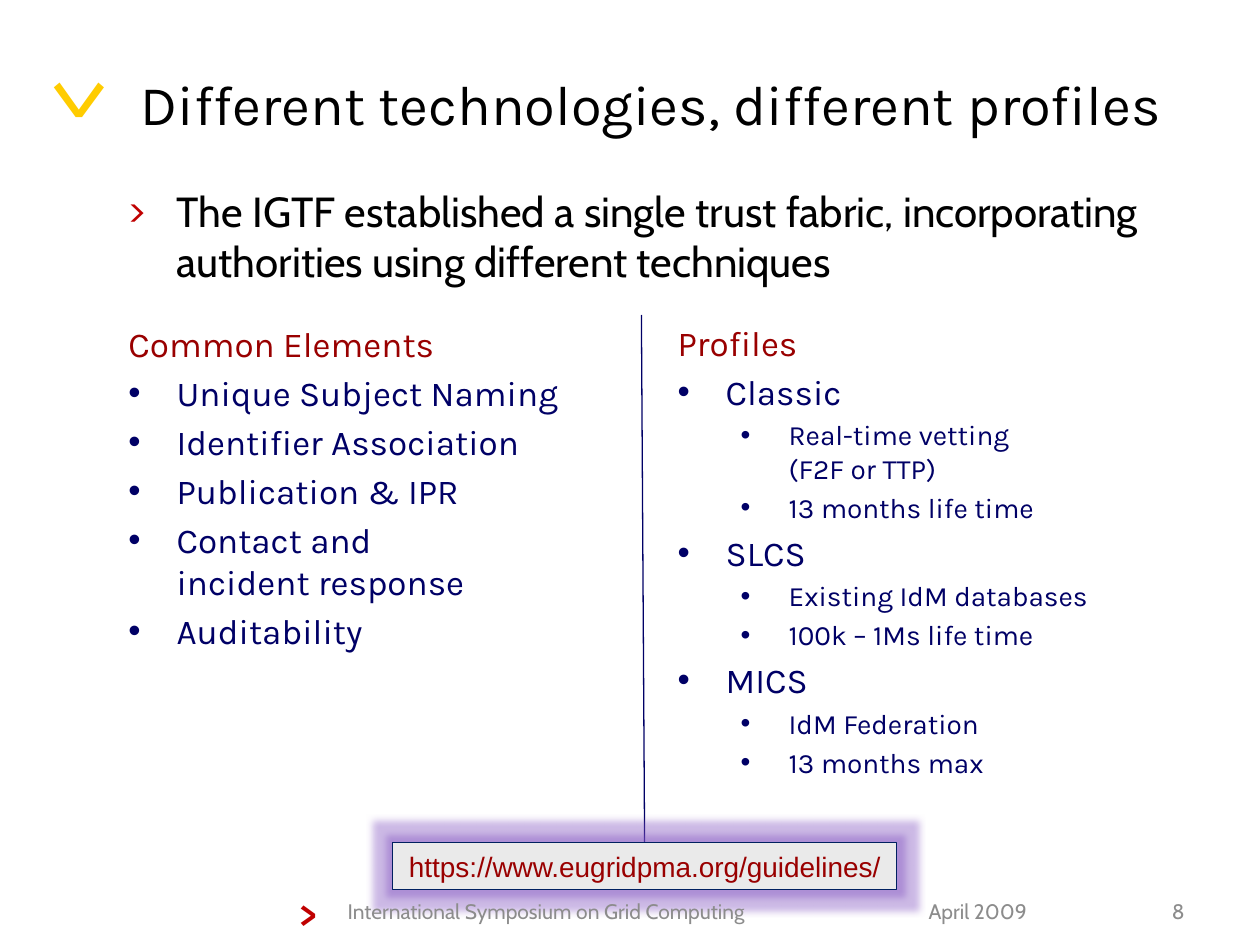
from copy import deepcopy

from lxml import etree
from pptx import Presentation
from pptx import util as u
from pptx.dml.color import RGBColor
from pptx.enum import shapes, text
from pptx.oxml import ns

Cm = u.Cm
INK = {
    "black": "000000", "navy": "000066", "edge": "002060", "red": "C00000",
    "wine": "990000", "gold": "FFCC00", "grey": "8C8C8C", "pale": "EAEAEA",
    "glow": "8050C0",
}
LEFT = [
    "Unique Subject Naming", "Identifier Association", "Publication & IPR",
    "Contact and\nincident response", "Auditability",
]
RIGHT = {
    "Classic": ["Real-time vetting\n(F2F or TTP)", "13 months life time"],
    "SLCS": ["Existing IdM databases", "100k – 1Ms life time"],
    "MICS": ["IdM Federation", "13 months max"],
}


def color(name):
    return RGBColor.from_string(INK[name])


def node(parent, tag, **attrs):
    item = etree.SubElement(parent, ns.qn("a:" + tag))
    for key, value in attrs.items():
        item.set(key, str(value))
    return item


def write(frame, words, size=20, font="Karla", ink="black", bold=False,
          align=None, level=0, hang=False, bullet=None, mark=None):
    """Add one paragraph; the first one fills the empty paragraph."""
    first = not frame.text
    para = frame.paragraphs[0] if first else frame.add_paragraph()
    para.text = words
    para.level = level
    para.alignment = align
    if not first:
        para.space_before = u.Pt(size * 0.2)
    props = para._p.get_or_add_pPr()
    if hang:
        props.set("marL", str(Cm(0.97 + 1.27 * level)))
        props.set("indent", str(-Cm(0.97)))
    if bullet:
        if mark:
            node(node(props, "buClr"), "srgbClr", val=INK[mark])
        node(props, "buFont", typeface="Arial" if bullet == "•" else font)
        node(props, "buChar", char=bullet)
    for run in para.runs:
        run.font.size = u.Pt(size)
        run.font.name = font
        run.font.bold = bold
        run.font.color.rgb = color(ink)
    # Line breaks take the size of the text around them
    for gap in para._p.findall(ns.qn("a:br")):
        gap.append(deepcopy(para.runs[0]._r.rPr))


def box(slide, left, top, width, height, middle=False, turn=0):
    shape = slide.shapes.add_textbox(Cm(left), Cm(top), Cm(width), Cm(height))
    shape.rotation = turn
    frame = shape.text_frame
    frame.word_wrap = True
    if middle:
        frame.vertical_anchor = text.MSO_ANCHOR.MIDDLE
    return frame


def item(frame, words, level=0):
    write(frame, words, size=16 if level else 20, ink="navy",
          level=level, hang=True, bullet="•")


def divide(slide):
    line = slide.shapes.add_connector(
        shapes.MSO_CONNECTOR.STRAIGHT, Cm(12.93), Cm(6.35), Cm(13), Cm(17.93))
    line.line.color.rgb = color("navy")
    line.line.width = u.Pt(0.75)
    node(line._element.spPr, "effectLst")
    return line


def label(slide, words):
    shape = slide.shapes.add_shape(
        shapes.MSO_SHAPE.RECTANGLE, Cm(7.92), Cm(16.98), Cm(10.16), Cm(0.95))
    shape.shadow.inherit = False
    shape.fill.solid()
    shape.fill.fore_color.rgb = color("pale")
    shape.line.color.rgb = color("edge")
    shape.line.width = u.Pt(0.75)
    # Soft glow
    effects = shape._element.spPr.find(ns.qn("a:effectLst"))
    glow = node(effects, "glow", rad=u.Pt(8))
    node(node(glow, "srgbClr", val=INK["glow"]), "alpha", val=40000)
    frame = shape.text_frame
    frame.vertical_anchor = text.MSO_ANCHOR.MIDDLE
    write(frame, words, size=16, font="Arial", ink="wine",
          align=text.PP_ALIGN.CENTER)
    return shape


def main():
    deck = Presentation()
    deck.slide_width, deck.slide_height = Cm(25.4), Cm(19.05)
    slide = deck.slides.add_slide(deck.slide_layouts[6])

    # Chevrons
    write(box(slide, 5.77, 17.86, 1.19, 1.12), ">", ink="red", bold=True)
    write(box(slide, 1.17, 0.58, 1.19, 2.57, turn=90), ">", size=54, ink="gold")

    # Title and lead
    write(box(slide, 2.59, 0.97, 21.54, 2.21, middle=True),
          "Different technologies, different profiles", size=32)
    write(box(slide, 2.34, 3.61, 22.33, 2.62),
          "The IGTF established a single trust fabric, incorporating "
          "authorities using different techniques",
          size=24, font="Cabin", hang=True, bullet=">", mark="red")

    # Two columns
    common = box(slide, 2.34, 6.38, 10.49, 12.01)
    write(common, "Common Elements", ink="wine", hang=True)
    for words in LEFT:
        item(common, words)
    kinds = box(slide, 13.41, 6.35, 10.49, 12.01)
    write(kinds, "Profiles", ink="wine", hang=True)
    for name, notes in RIGHT.items():
        item(kinds, name)
        for words in notes:
            item(kinds, words, level=1)

    # Divider running behind the address
    line = divide(slide)
    line.end_connect(label(slide, "https://www.eugridpma.org/guidelines/"), 2)

    # Footer
    for left, width, words, align in (
        (18.47, 2.97, "April 2009", None),
        (22.81, 1.32, "8", text.PP_ALIGN.RIGHT),
        (6.76, 9.12, "International Symposium on Grid Computing", None),
    ):
        write(box(slide, left, 18.06, width, 0.6, middle=True), words,
              size=12, font="Cabin", ink="grey", align=align)

    deck.save("out.pptx")


if __name__ == "__main__":
    main()
